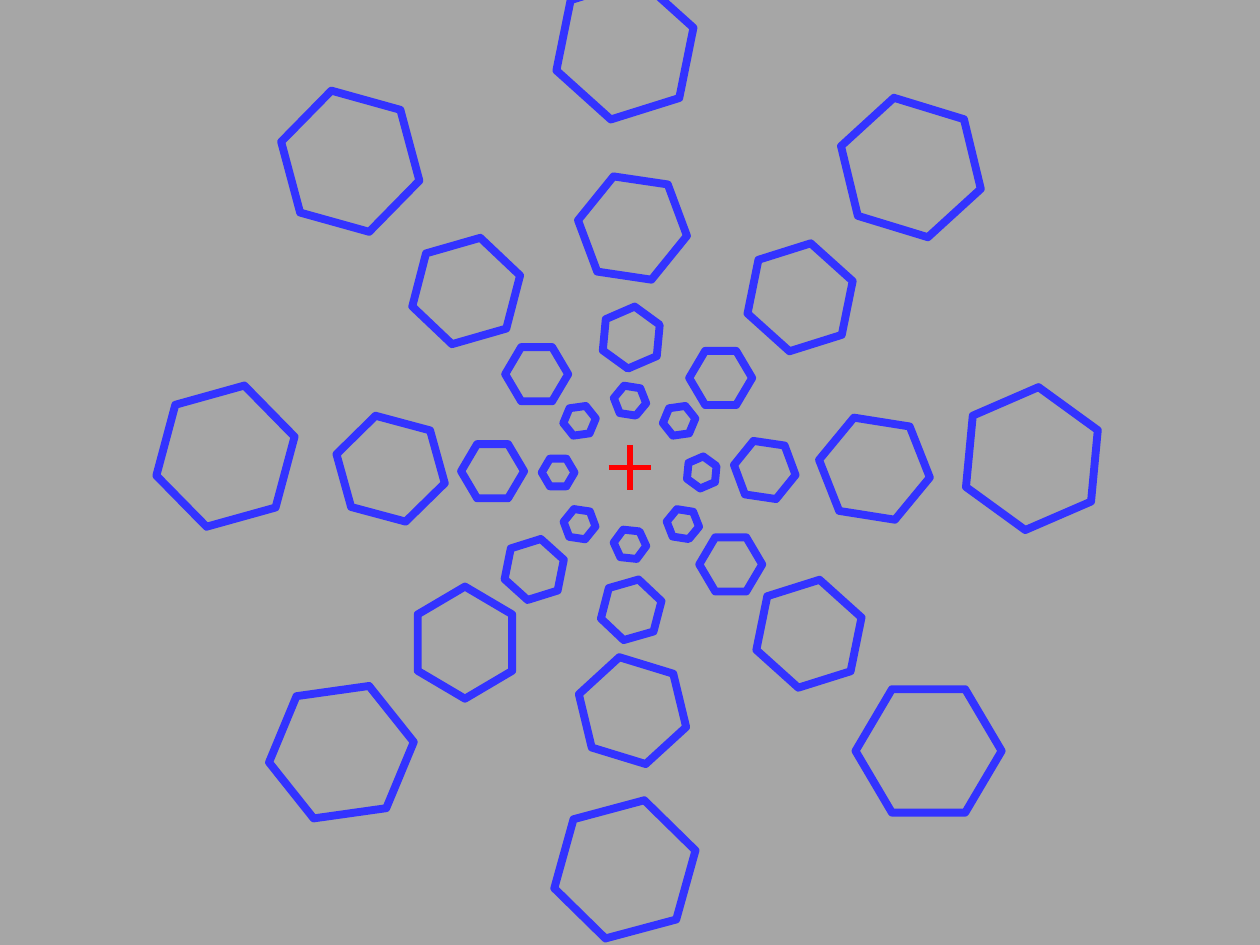
from lxml import etree
from pptx import Presentation
from pptx.dml.color import RGBColor
from pptx.enum.shapes import MSO_CONNECTOR, MSO_SHAPE
from pptx.oxml.ns import qn
from pptx.util import Inches, Pt

HEXAGON = MSO_SHAPE.HEXAGON
PROCESS = MSO_SHAPE.FLOWCHART_PROCESS
STRAIGHT = MSO_CONNECTOR.STRAIGHT

GREY = RGBColor(0xA6, 0xA6, 0xA6)
BLUE = RGBColor(0x33, 0x33, 0xFF)
RED = RGBColor(0xFF, 0x00, 0x00)

HEX_LINE = {"color": BLUE, "width": Pt(4.5)}
CROSS_LINE = {"color": RED, "width": Pt(3)}
HEX_ADJ = 0.295

# Lengths are hundredths of the box width.
# Each ring: hexagon size, then centre offset from the box centre and rotation.
RINGS = [
    ((11.6, 9.8), [
        (-22.2, -24.7, 75), (-32.1, -1.3, 285), (-22.9, 22.2, 352), (23.7, 22.1, 0),
        (31.9, -1.1, 36), (22.3, -24.2, 17), (-0.4, -33.6, 42), (-0.4, 31.5, 345)]),
    ((8.9, 7.5), [
        (-19, -0.3, 15), (-13, -14.4, 344), (0.2, -19.4, 309), (13.5, -13.9, 42),
        (-13.1, 13.5, 90), (0.2, 18.9, 17), (14.2, 12.8, 42), (19.4, -0.3, 9)]),
    ((5, 4.3), [
        (-10.9, -0.1, 0), (-7.4, -7.8, 0), (0.1, -10.7, 36), (7.2, -7.5, 0),
        (-7.6, 7.7, 42), (0.1, 10.9, 344), (8, 7.3, 0), (10.7, -0.2, 309)]),
    ((2.6, 2.2), [
        (-4, 4.1, 309), (0, 5.7, 6), (4.2, 4.1, 9), (5.7, 0, 36),
        (-5.7, 0, 0), (-4, -4.1, 352), (0, -5.7, 9), (3.9, -4.1, 352)]),
]


def format_line(line, style):
    line.color.rgb = style["color"]
    line.width = style["width"]


def add_backdrop(slide, left, top, width, height):
    sp = slide.shapes.add_shape(PROCESS, left, top, width, height)
    sp.shadow.inherit = False
    sp.fill.solid()
    sp.fill.fore_color.rgb = GREY
    sp.line.fill.background()


def add_ring(slide, box, size, places):
    """Draw one ring of outlined hexagons around the centre of the box."""
    left, top, width, height = box
    unit = width / 100
    w, h = (side * unit for side in size)
    for dx, dy, rotation in places:
        x = left + width / 2 + dx * unit - w / 2
        y = top + height / 2 + dy * unit - h / 2
        sp = slide.shapes.add_shape(HEXAGON, *map(round, (x, y, w, h)))
        sp.adjustments[0] = HEX_ADJ
        sp.rotation = rotation
        sp.shadow.inherit = False
        sp.fill.background()
        format_line(sp.line, HEX_LINE)


def add_cross(slide, left, top, width, height):
    group = slide.shapes.add_group_shape()
    mid_x, mid_y = left + width // 2, top + height // 2
    for ends in ((mid_x, top, mid_x, top + height), (left, mid_y, left + width, mid_y)):
        arm = group.shapes.add_connector(STRAIGHT, *ends)
        format_line(arm.line, CROSS_LINE)
        etree.SubElement(arm._element.spPr, qn("a:effectLst"))


def main():
    prs = Presentation()
    prs.slide_width, prs.slide_height = Inches(10), Inches(7.5)
    slide = prs.slides.add_slide(prs.slide_layouts[6])
    box = (0, 0, prs.slide_width, prs.slide_height)
    add_backdrop(slide, *box)
    for size, places in RINGS:
        add_ring(slide, box, size, places)
    add_cross(slide, Inches(4.83), Inches(3.53), Inches(0.34), Inches(0.36))
    prs.save("out.pptx")


if __name__ == "__main__":
    main()
